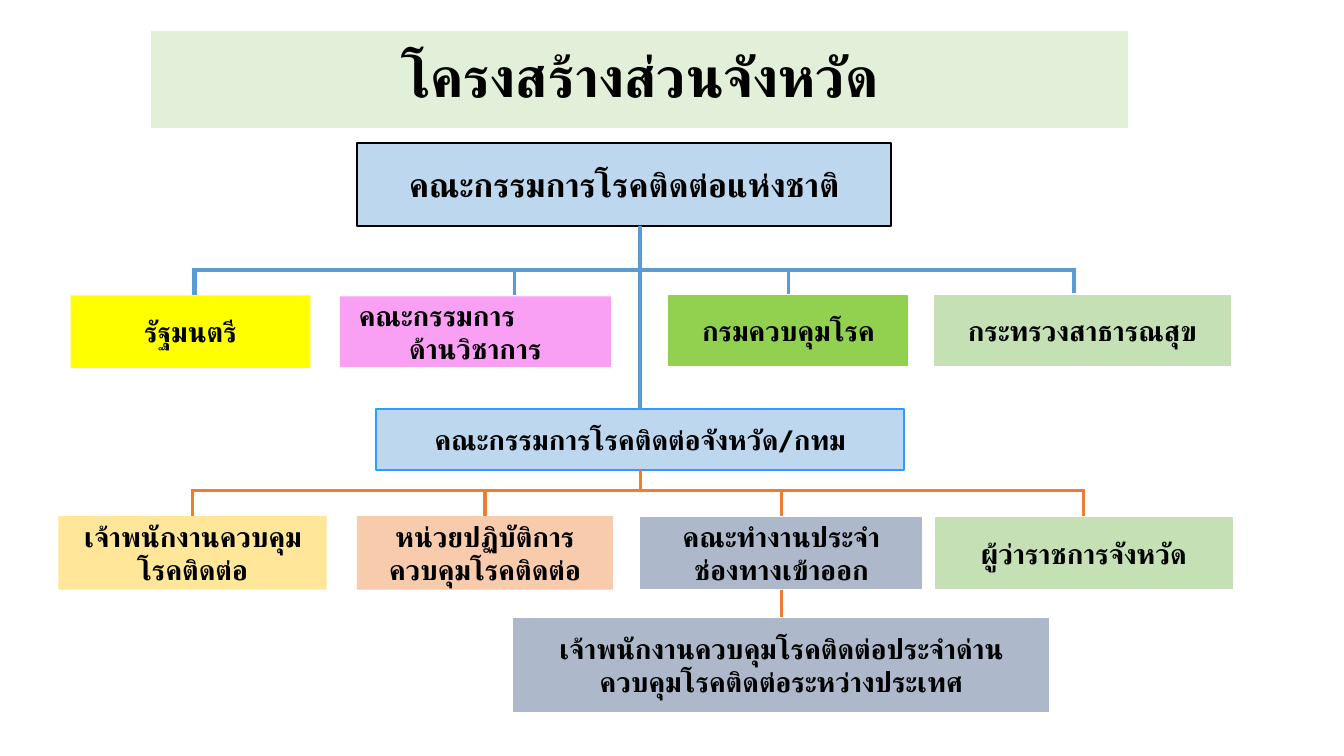
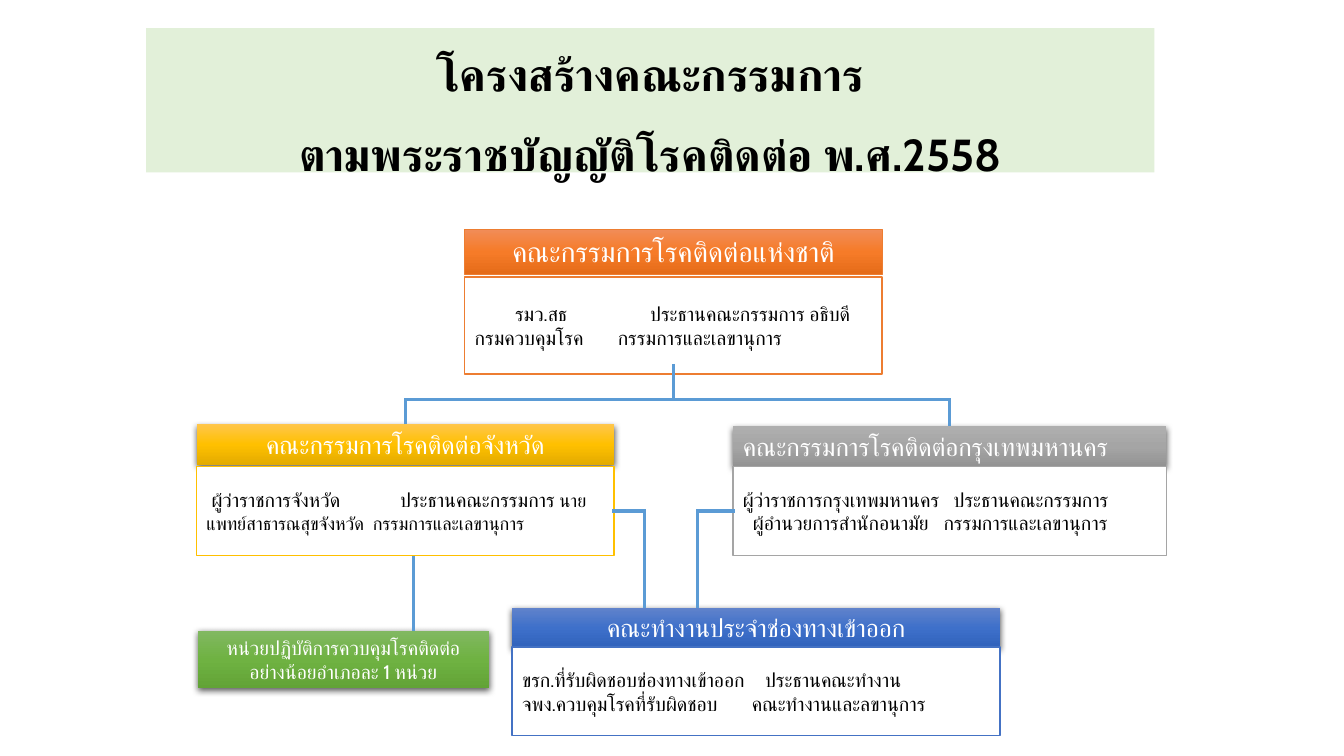
from dataclasses import dataclass

from lxml.etree import SubElement as Sub
from pptx import Presentation
from pptx.dml.color import RGBColor as Rgb
from pptx.enum.shapes import MSO_CONNECTOR as Link, MSO_SHAPE as Kind
from pptx.enum.text import MSO_ANCHOR as Anchor, MSO_AUTO_SIZE as Fit, PP_ALIGN as Align
from pptx.oxml.ns import qn
from pptx.util import Emu, Pt

PX = 9144  # EMU in one px, 100 px to the inch
FONT = "Cabin"
HEX = {
    "black": "000000", "white": "FFFFFF", "mint": "E2F0D9", "sky": "BDD7EE",
    "azure": "3399FF", "yellow": "FFFF00", "pink": "FAA0F4", "lime": "92D050",
    "sage": "C5E0B4", "cream": "FFE699", "peach": "F8CBAD", "slate": "ADB9CA",
    "blue": "5B9BD5", "orange": "ED7D31", "gold": "FFC000", "gray": "A5A5A5",
    "navy": "4472C4",
}
FADES = {
    "orange": ("F18C57", "F67B28", "E56C19"),
    "gold": ("FFC64B", "FFC000", "E3AB00"),
    "gray": ("AFAFAF", "A5A5A5", "939393"),
    "navy": ("6183CB", "3E70CA", "3062BB"),
    "green": ("81B861", "6FB242", "62A336"),
}


@dataclass(frozen=True)
class Row:
    """One paragraph: runs of (text, size), with tab stops in px."""
    runs: tuple[tuple[str, float], ...]
    align: Align = Align.CENTER
    tabs: tuple[int, ...] = ()
    space: float | None = None


@dataclass(frozen=True)
class Box:
    rect: tuple[int, int, int, int]
    fill: str
    rows: tuple[Row, ...]
    edge: str | None = None
    width: float = 1.5
    bold: bool = True
    head: bool = False  # shaded heading with white text
    shade: bool = False


@dataclass(frozen=True)
class Wire:
    points: tuple[tuple[int, int], ...]
    tint: str = "blue"
    width: float = 2.25


def px(value: int) -> Emu:
    return Emu(value * PX)


def tone(name: str) -> Rgb:
    return Rgb.from_string(HEX[name])


def row(text: str, size: float = 20, align: Align = Align.CENTER) -> tuple[Row, ...]:
    return (Row(((text, size),), align),)


def entry(text: str, *tabs: int, size: float = 14, tail: str = "") -> Row:
    runs = ((text, size),) + (((tail, 13),) if tail else ())
    return Row(runs, Align.LEFT, tabs)


def write(frame, rows: tuple[Row, ...], ink: str, bold: bool) -> None:
    frame.word_wrap = True
    for num, item in enumerate(rows):
        para = frame.add_paragraph() if num else frame.paragraphs[0]
        para.alignment = item.align
        if item.space:
            para.line_spacing = item.space
            para.space_before = Pt(0)
        if item.tabs:
            stops = Sub(para._p.get_or_add_pPr(), qn("a:tabLst"))
            for stop in item.tabs:
                Sub(stops, qn("a:tab"), pos=str(px(stop)), algn="l")
        for text, size in item.runs:
            for part, piece in enumerate(text.split("\n")):
                if part:
                    para.add_line_break()
                run = para.add_run()
                run.text = piece
                font = run.font
                font.name, font.size, font.bold = FONT, Pt(size), bold
                font.color.rgb = tone(ink)
                # Thai letters take the complex-script font
                Sub(run._r.get_or_add_rPr(), qn("a:cs"), typeface=FONT)


def color(parent, value: str):
    return Sub(parent, qn("a:srgbClr"), val=value)


def fade(shape, name: str) -> None:
    shape.fill.gradient()
    shape.fill.gradient_angle = 270
    stops = shape._element.spPr.find(qn("a:gradFill")).find(qn("a:gsLst"))
    for old in list(stops):
        stops.remove(old)
    for num, value in enumerate(FADES[name]):
        color(Sub(stops, qn("a:gs"), pos=str(num * 50000)), value)


def cast(shape) -> None:
    effects = shape._element.spPr.find(qn("a:effectLst"))
    outer = Sub(effects, qn("a:outerShdw"), blurRad=str(Pt(4.5)),
                dist=str(Pt(1.5)), dir="5400000", algn="ctr", rotWithShape="0")
    Sub(color(outer, HEX["black"]), qn("a:alpha"), val="63000")


def title(slide, rect: tuple[int, int, int, int], line: Row) -> None:
    shape = slide.shapes.title
    shape.left, shape.top, shape.width, shape.height = map(px, rect)
    shape.fill.solid()
    shape.fill.fore_color.rgb = tone("mint")
    frame = shape.text_frame
    frame.auto_size = Fit.NONE
    frame.vertical_anchor = Anchor.MIDDLE
    write(frame, (line,), "black", True)


def draw(slide, box: Box):
    shape = slide.shapes.add_shape(Kind.RECTANGLE, *map(px, box.rect))
    shape.shadow.inherit = False
    if box.head:
        fade(shape, box.fill)
    else:
        shape.fill.solid()
        shape.fill.fore_color.rgb = tone(box.fill)
    if box.edge:
        shape.line.color.rgb = tone(box.edge)
        shape.line.width = Pt(box.width)
    else:
        shape.line.fill.background()
    if box.shade:
        cast(shape)
    frame = shape.text_frame
    frame.vertical_anchor = Anchor.TOP if box.head else Anchor.MIDDLE
    frame.auto_size = Fit.SHAPE_TO_FIT_TEXT if box.head else Fit.NONE
    write(frame, box.rows, "white" if box.head else "black", box.bold)
    return shape


def sides(shape) -> tuple[tuple[int, int], ...]:
    """Middles of the top, left, bottom and right sides."""
    x, y, w, h = shape.left, shape.top, shape.width, shape.height
    return (x + w // 2, y), (x, y + h // 2), (x + w // 2, y + h), (x + w, y + h // 2)


def join(attach, point: tuple[int, int], shapes: list) -> None:
    for shape in shapes:
        for site, (x, y) in enumerate(sides(shape)):
            if max(abs(x - px(point[0])), abs(y - px(point[1]))) <= px(1):
                attach(shape, site)
                return


def string(slide, wire: Wire, shapes: list) -> None:
    for start, end in zip(wire.points, wire.points[1:]):
        line = slide.shapes.add_connector(Link.STRAIGHT, *map(px, start + end))
        line.line.color.rgb = tone(wire.tint)
        line.line.width = Pt(wire.width)
        if start[1] == end[1]:  # square ends fill the corners
            line.line._get_or_add_ln().set("cap", "sq")
        Sub(line._element.spPr, qn("a:effectLst"))
        join(line.begin_connect, start, shapes)
        join(line.end_connect, end, shapes)


def panel(rect: tuple[int, int, int, int], split: int, tint: str, head: tuple[Row, ...],
          rows: tuple[Row, ...], edge: str | None = None) -> tuple[Box, Box]:
    """A shaded heading over a framed list; split is the list's top."""
    x, y, w, h = rect
    return (
        Box(rect, tint, head, edge, 0.5, bold=False, head=True, shade=edge is None),
        Box((x, split, w, h * 2 + 8), "white", rows, tint, 1, bold=False),
    )


# Slide 1: boxes of the provincial structure
PROVINCE = (
    Box((354, 142, 530, 82), "sky", row("คณะกรรมการโรคติดต่อแห่งชาติ", 24), "black"),
    Box((70, 293, 238, 72), "yellow", row("รัฐมนตรี")),
    Box((337, 294, 269, 70), "pink", (
        Row((("\tคณะกรรมการ", 20),), Align.LEFT, (9,)),
        *row("ด้านวิชาการ"))),
    Box((662, 292, 240, 72), "lime", row("กรมควบคุมโรค"), "white"),
    Box((925, 292, 297, 72), "sage", row("กระทรวงสาธารณสุข"), "white"),
    Box((373, 406, 524, 60), "sky", row("คณะกรรมการโรคติดต่อจังหวัด/กทม"), "azure"),
    Box((58, 512, 266, 73), "cream", row("เจ้าพนักงานควบคุมโรคติดต่อ")),
    Box((354, 512, 254, 73), "peach", row("หน่วยปฏิบัติการควบคุมโรคติดต่อ")),
    Box((634, 512, 282, 73), "slate", row("คณะทำงานประจำ\nช่องทางเข้าออก"), "white"),
    Box((926, 512, 298, 73), "sage", row("ผู้ว่าราชการจังหวัด"), "white"),
    Box((508, 612, 534, 95), "slate",
        row("เจ้าพนักงานควบคุมโรคติดต่อประจำด่านควบคุมโรคติดต่อระหว่างประเทศ"), "white"),
)
TREE = (
    Wire(((193, 293), (193, 268), (1065, 268), (1065, 291)), width=3),
    Wire(((510, 268), (510, 293))),
    Wire(((782, 268), (782, 292))),
    Wire(((635, 224), (635, 406)), width=3),
    Wire(((191, 512), (191, 487), (1075, 487), (1075, 512)), "orange"),
    Wire(((481, 487), (481, 512)), "orange"),
    Wire(((775, 487), (775, 512)), "orange"),
    Wire(((775, 585), (775, 612)), "orange"),
    Wire(((635, 466), (635, 487)), "orange"),
)

# Slide 2: committees under the act
ACT = (
    *panel((461, 228, 414, 44), 275, "orange", row("คณะกรรมการโรคติดต่อแห่งชาติ"), (
        entry("\tรมว.สธ\tประธานคณะกรรมการ อธิบดี", 40, 174),
        entry("กรมควบคุมโรค\tกรรมการและเลขานุการ", 142)), "orange"),
    *panel((195, 421, 414, 40), 463, "gold", row("คณะกรรมการโรคติดต่อจังหวัด", 18), (
        entry("\tผู้ว่าราชการจังหวัด\tประธานคณะกรรมการ ", 5, 192, tail="นาย"),
        entry("แพทย์สาธารณสุขจังหวัด\tกรรมการและเลขานุการ", 165, size=13))),
    *panel((727, 423, 430, 40), 463, "gray",
           row("คณะกรรมการโรคติดต่อกรุงเทพมหานคร", 18, Align.LEFT), (
        entry("ผู้ว่าราชการกรุงเทพมหานคร\tประธานคณะกรรมการ", 209),
        entry("\tผู้อำนวยการสำนักอนามัย\tกรรมการและเลขานุการ", 10, 199))),
    *panel((508, 603, 484, 40), 642, "navy", row("คณะทำงานประจำช่องทางเข้าออก", 18), (
        entry("ขรก.ที่รับผิดชอบช่องทางเข้าออก\tประธานคณะทำงาน", 241),
        entry("จพง.ควบคุมโรคที่รับผิดชอบ\tคณะทำงานและลขานุการ", 228))),
    Box((196, 626, 289, 57), "green",
        row("หน่วยปฏิบัติการควบคุมโรคติดต่อ", 14) + row("อย่างน้อยอำเภอละ 1 หน่วย", 14),
        bold=False, head=True, shade=True),
)
LINKS = (
    Wire(((410, 552), (410, 626))),
    Wire(((402, 421), (402, 396), (942, 396), (942, 423))),
    Wire(((668, 361), (668, 396))),
    Wire(((609, 507), (639, 507), (639, 603))),
    Wire(((727, 507), (692, 507), (692, 603))),
)

PAGES = (
    ((150, 31, 969, 96), Row((("โครงสร้างส่วนจังหวัด", 40),), space=0.9), PROVINCE, TREE),
    ((145, 28, 1000, 143),
     Row((("โครงสร้างคณะกรรมการ\nตามพระราชบัญญัติโรคติดต่อ พ.ศ.2558", 32),), space=1.5),
     ACT, LINKS),
)


def main() -> None:
    deck = Presentation()
    deck.slide_width, deck.slide_height = px(1333), px(750)
    for rect, line, boxes, wires in PAGES:
        slide = deck.slides.add_slide(deck.slide_layouts[5])
        title(slide, rect, line)
        shapes = [draw(slide, box) for box in boxes]
        for wire in wires:
            string(slide, wire, shapes)
    deck.save("out.pptx")


if __name__ == "__main__":
    main()
